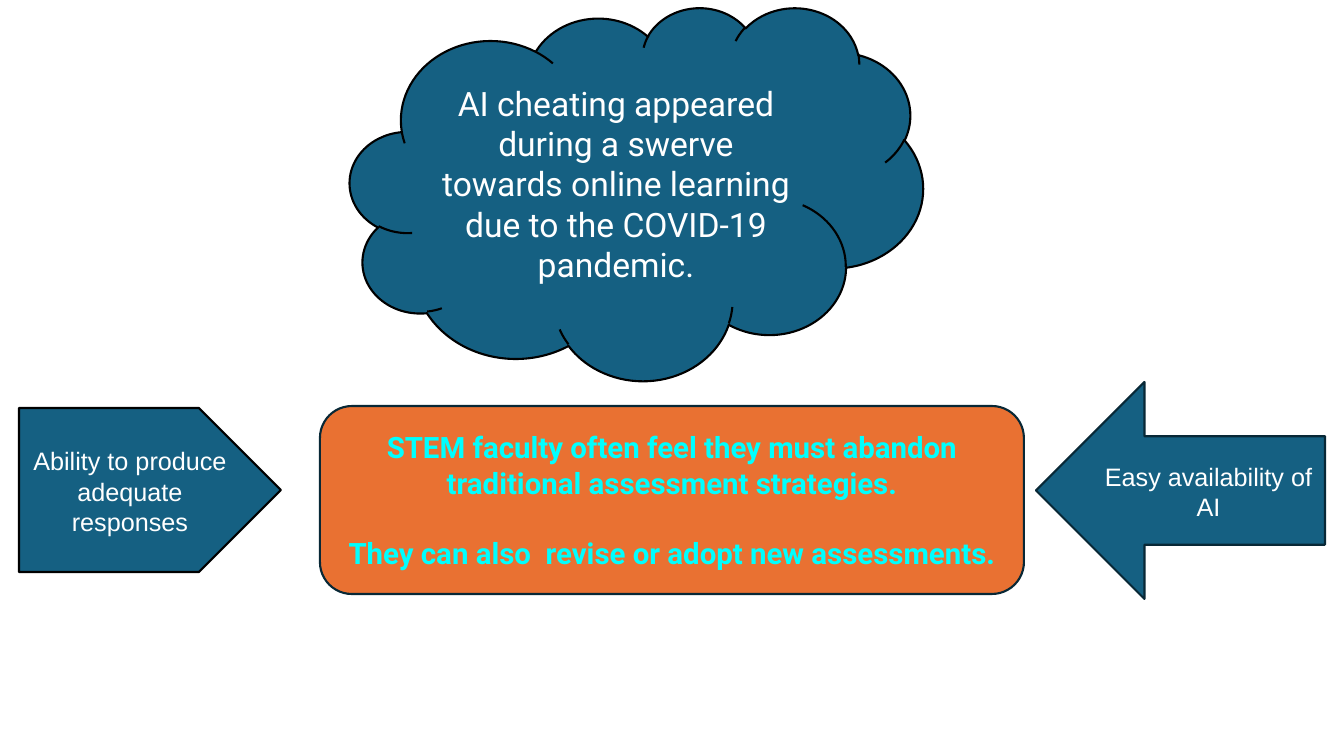
from collections import namedtuple
from dataclasses import dataclass

from pptx import Presentation
from pptx.dml.color import RGBColor
from pptx.enum.shapes import MSO_SHAPE
from pptx.enum.text import MSO_ANCHOR, PP_ALIGN
from pptx.util import Pt

EMU_PER_PX = 914400 / 100.8
Box = namedtuple("Box", "left top width height")
TextStyle = namedtuple("TextStyle", "font size color bold")


@dataclass(frozen=True)
class Theme:
    blue: RGBColor = RGBColor(0x15, 0x60, 0x82)
    orange: RGBColor = RGBColor(0xE9, 0x71, 0x32)
    black: RGBColor = RGBColor(0, 0, 0)
    navy: RGBColor = RGBColor(0x08, 0x28, 0x36)
    white: RGBColor = RGBColor(0xFF, 0xFF, 0xFF)
    cyan: RGBColor = RGBColor(0, 0xFF, 0xFF)
    outline: Pt = Pt(1.5)
    paragraph_gap: Pt = Pt(25)
    context: TextStyle = TextStyle("Roboto", Pt(24), white, False)
    message: TextStyle = TextStyle("Roboto", Pt(21), cyan, True)
    pressure: TextStyle = TextStyle("Arial", Pt(18), white, False)


THEME = Theme()


def px(length):
    return round(length * EMU_PER_PX)


def emu_box(box):
    return [px(length) for length in box]


def inside(box, left, top, width, height):
    """Return a box whose offsets are measured from the corner of another."""
    return Box(box.left + left, box.top + top, width, height)


def add_outlined_shape(group, preset, box, fill, line):
    shape = group.shapes.add_shape(preset, *emu_box(box))
    shape.shadow.inherit = False
    shape.fill.solid()
    shape.fill.fore_color.rgb = fill
    shape.line.color.rgb = line
    shape.line.width = THEME.outline
    return shape


def add_label(group, box, style, *sentences):
    frame = group.shapes.add_textbox(*emu_box(box)).text_frame
    frame.word_wrap = True
    frame.vertical_anchor = MSO_ANCHOR.MIDDLE
    frame.margin_left = frame.margin_right = px(5)
    frame.margin_top = frame.margin_bottom = px(5)
    for index, sentence in enumerate(sentences):
        paragraph = frame.add_paragraph() if index else frame.paragraphs[0]
        paragraph.text = sentence
        paragraph.alignment = PP_ALIGN.CENTER
        if index:
            paragraph.space_before = THEME.paragraph_gap
        paragraph.font.name = style.font
        paragraph.font.size = style.size
        paragraph.font.bold = style.bold
        paragraph.font.color.rgb = style.color


def add_pandemic_cloud(slide, box):
    group = slide.shapes.add_group_shape()
    add_outlined_shape(group, MSO_SHAPE.CLOUD, box, THEME.blue, THEME.black)
    add_label(group, inside(box, 85, 70, 362, 213), THEME.context,
              "AI cheating appeared during a swerve towards online learning "
              "due to the COVID-19 pandemic.")


def add_faculty_message(slide, box):
    group = slide.shapes.add_group_shape()
    panel = add_outlined_shape(group, MSO_SHAPE.ROUNDED_RECTANGLE, box,
                               THEME.orange, THEME.navy)
    panel.adjustments[0] = 0.17
    add_label(group, inside(box, 15, 1, box.width - 30, box.height - 2), THEME.message,
              "STEM faculty often feel they must abandon traditional assessment strategies.",
              "They can also  revise or adopt new assessments.")


def add_availability_arrow(slide, box):
    group = slide.shapes.add_group_shape()
    add_outlined_shape(group, MSO_SHAPE.LEFT_ARROW, box, THEME.blue, THEME.navy)
    add_label(group, inside(box, 61, 75, 223, 69), THEME.pressure,
              "Easy availability of AI")


def add_ability_pentagon(slide, box):
    group = slide.shapes.add_group_shape()
    add_outlined_shape(group, MSO_SHAPE.PENTAGON, box, THEME.blue, THEME.black)
    add_label(group, inside(box, 6, 34, 210, 98), THEME.pressure,
              "Ability to produce adequate responses")


def main():
    presentation = Presentation()
    presentation.slide_width = px(1344)
    presentation.slide_height = px(756)
    slide = presentation.slides.add_slide(presentation.slide_layouts[6])
    add_pandemic_cloud(slide, Box(350, 7, 573, 373))
    add_faculty_message(slide, Box(320, 406, 704, 188))
    add_availability_arrow(slide, Box(1036, 382, 289, 217))
    add_ability_pentagon(slide, Box(19, 408, 262, 164))
    presentation.save("out.pptx")


if __name__ == "__main__":
    main()
